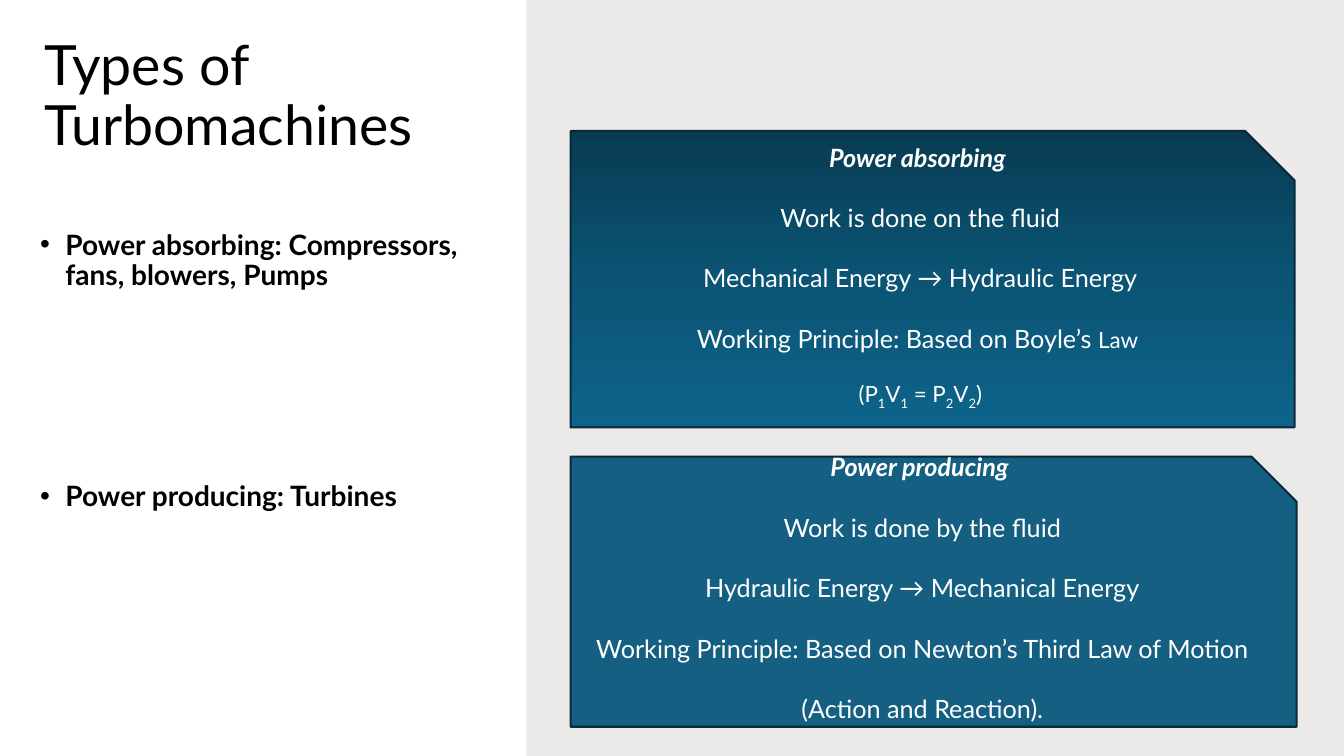
from copy import deepcopy

from lxml.etree import SubElement
from pptx import Presentation
from pptx.dml.color import RGBColor as RGB
from pptx.enum.shapes import MSO_SHAPE as Shape
from pptx.enum.text import MSO_ANCHOR as Anchor, PP_ALIGN as Align
from pptx.oxml.ns import qn
from pptx.util import Inches, Pt

COLORS = {
    "ink": "000000", "light": "FFFFFF", "panel": "82766A", "edge": "092A39",
    "top": "083B52", "mid": "0B5474", "low": "0D638A", "flat": "156082",
}
FONT = "Lato"


def hue(name):
    return RGB.from_string(COLORS[name])


def style(run, size, color, bold=False, italic=False):
    font = run.font
    font.name, font.size = FONT, Pt(size)
    font.bold, font.italic = bold, italic
    font.color.rgb = hue(color)


def add_text(slide, box, top):
    """Add a wrapping text box whose text starts at the inset top."""
    frame = slide.shapes.add_textbox(*map(Inches, box)).text_frame
    frame.word_wrap = True
    frame.vertical_anchor = Anchor.TOP
    frame.margin_top = Inches(top)
    return frame


def add_panel(slide, box):
    panel = slide.shapes.add_shape(Shape.RECTANGLE, *map(Inches, box))
    panel.shadow.inherit = False
    panel.line.fill.background()
    panel.fill.solid()
    panel.fill.fore_color.rgb = hue("panel")
    color = panel._element.spPr.find(".//" + qn("a:srgbClr"))
    SubElement(color, qn("a:alpha"), val="15000")


def add_title(slide, box, text):
    para = add_text(slide, box, 0.27).paragraphs[0]
    para.text = text
    para.line_spacing = 0.9
    style(para.runs[0], 39.6, "ink")


def add_list(slide, box, items, gap):
    frame = add_text(slide, box, 0.49)
    frame.text = "\n".join(items)
    for i, para in enumerate(frame.paragraphs):
        para.line_spacing = 0.9
        para.space_before = Pt(gap if i else 0)
        props = para._p.get_or_add_pPr()
        props.set("marL", str(Inches(0.25)))
        props.set("indent", str(Inches(-0.25)))
        SubElement(props, qn("a:buFont"), typeface="Arial")
        SubElement(props, qn("a:buChar"), char="•")
        style(para.runs[0], 20, "ink", bold=True)


def paint(card, names):
    """Fill with one colour, or with an even gradient from top to bottom."""
    fill = card.fill
    if len(names) == 1:
        fill.solid()
        fill.fore_color.rgb = hue(names[0])
        return
    fill.gradient()
    fill.gradient_angle = 270
    stops = card._element.spPr.find(".//" + qn("a:gsLst"))
    for _ in names[2:]:
        stops.insert(1, deepcopy(stops[0]))
    for i, (stop, name) in enumerate(zip(fill.gradient_stops, names)):
        stop.position = i / (len(names) - 1)
        stop.color.rgb = hue(name)


def add_card(slide, box, names, lines):
    """Add a snipped card; each line is a list of (text, size, lowered) runs."""
    card = slide.shapes.add_shape(Shape.SNIP_1_RECTANGLE, *map(Inches, box))
    card.shadow.inherit = False
    paint(card, names)
    card.line.color.rgb = hue("edge")
    card.line.width = Pt(1.5)
    frame = card.text_frame
    frame.word_wrap = True
    frame.vertical_anchor = Anchor.MIDDLE
    frame.margin_bottom = Inches(0.35)
    for i, parts in enumerate(lines):
        para = frame.paragraphs[0] if i == 0 else frame.add_paragraph()
        para.alignment = Align.CENTER
        para.space_before = Pt(1.2 * parts[0][1] if i else 0)
        for text, size, low in parts:
            run = para.add_run()
            run.text = text
            style(run, size, "light", bold=i == 0, italic=i == 0)
            if low:
                run._r.get_or_add_rPr().set("baseline", "-25000")


def plain(text, size=18):
    return [(text, size, False)]


def add_types(slide):
    add_panel(slide, (5.22, 0, 8.12, 7.5))
    add_title(slide, (0.34, 0.1, 4.62, 1.13), "Types of Turbomachines")
    add_list(slide, (0.3, 1.8, 4.41, 5.03), [
        "Power absorbing: Compressors, fans, blowers, Pumps",
        "Power producing: Turbines",
    ], 136.4)
    terms = ["(P", "1", "V", "1", " = P", "2", "V", "2", ")"]
    add_card(slide, (5.66, 1.3, 7.18, 2.94), ["top", "mid", "low"], [
        plain("Power absorbing "),
        plain("Work is done on the fluid"),
        plain("Mechanical Energy → Hydraulic Energy"),
        plain("Working Principle: Based on Boyle’s ") + plain("Law ", 16),
        [(term, 16, term.isdigit()) for term in terms],
    ])
    add_card(slide, (5.66, 4.53, 7.2, 2.68), ["flat"], [
        plain("Power producing "),
        plain("Work is done by the fluid"),
        plain("Hydraulic Energy → Mechanical Energy"),
        plain("Working Principle: Based on Newton’s Third Law of Motion"),
        plain("(Action and Reaction)."),
    ])


def main():
    deck = Presentation()
    deck.slide_width, deck.slide_height = Inches(13.33), Inches(7.5)
    add_types(deck.slides.add_slide(deck.slide_layouts[6]))
    deck.save("out.pptx")


if __name__ == "__main__":
    main()
